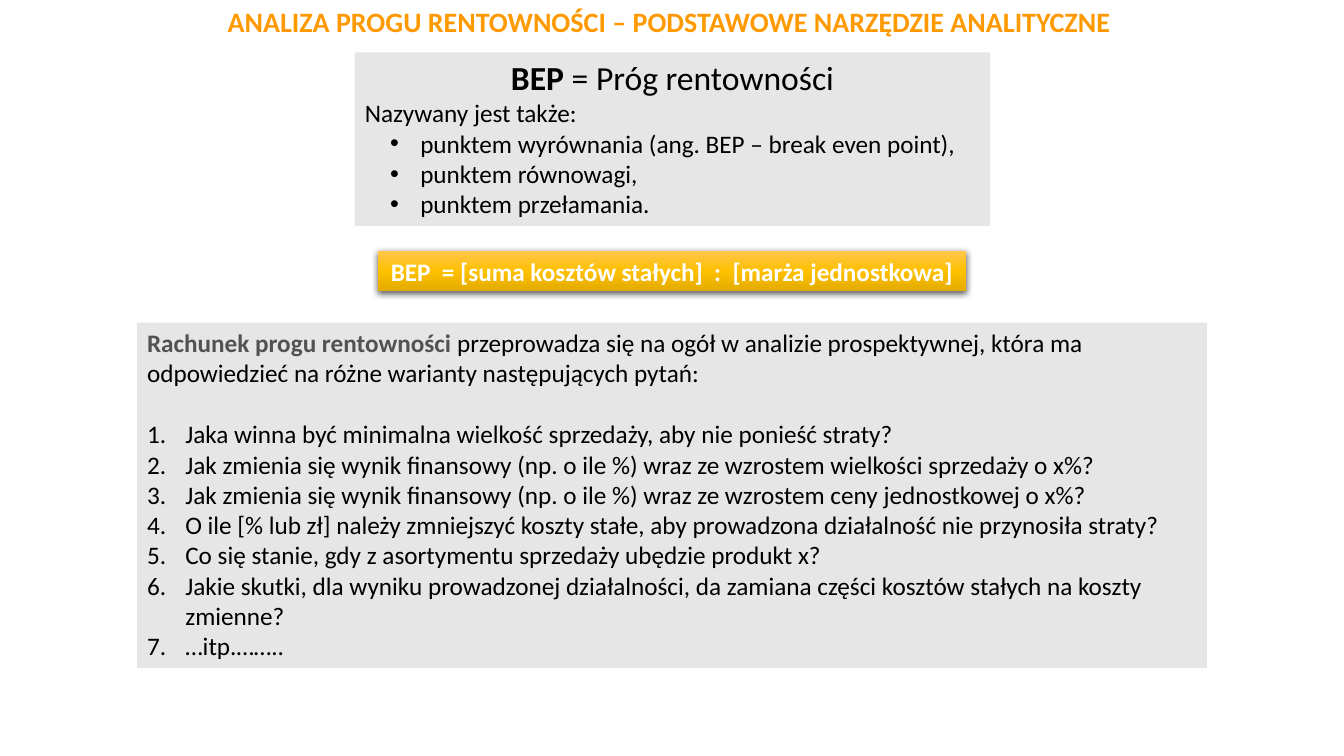
from lxml.etree import SubElement
from pptx import Presentation
from pptx.dml.color import RGBColor
from pptx.enum.shapes import MSO_SHAPE
from pptx.enum.text import MSO_ANCHOR, PP_ALIGN
from pptx.oxml.ns import qn
from pptx.util import Inches, Pt

COLORS = {
    "title": "FF9900", "panel": "E7E6E6", "text": "000000",
    "term": "525252", "white": "FFFFFF", "shadow": "000000",
    "gold_top": "FFC64B", "gold_middle": "FFC000", "gold_bottom": "E3AB00",
}
FONT = "Calibri"
TITLE = "ANALIZA PROGU RENTOWNOŚCI – PODSTAWOWE NARZĘDZIE ANALITYCZNE"
FORMULA = "BEP  = [suma kosztów stałych]  :  [marża jednostkowa]"
ALIASES = [
    "punktem wyrównania (ang. BEP – break even point),",
    "punktem równowagi,",
    "punktem przełamania.",
]
INTRO = ("przeprowadza się na ogół w analizie prospektywnej, która ma "
         "odpowiedzieć na różne warianty następujących pytań:")
QUESTIONS = [
    "Jaka winna być minimalna wielkość sprzedaży, aby nie ponieść straty?",
    "Jak zmienia się wynik finansowy (np. o ile %) wraz ze wzrostem wielkości sprzedaży o x%?",
    "Jak zmienia się wynik finansowy (np. o ile %) wraz ze wzrostem ceny jednostkowej o x%?",
    "O ile [% lub zł] należy zmniejszyć koszty stałe, aby prowadzona działalność nie przynosiła straty?",
    "Co się stanie, gdy z asortymentu sprzedaży ubędzie produkt x?",
    "Jakie skutki, dla wyniku prowadzonej działalności, da zamiana części kosztów stałych na koszty zmienne?",
    "…itp.……..",
]
BOXES = {
    "formula": (3.75, 2.49, 5.83, 0.4),
    "definition": (3.52, 0.52, 6.3, 1.72),
    "questions": (1.36, 3.2, 10.61, 3.43),
    "title": (2.16, 0, 9.02, 0.44),
}
STOPS = [(0, "gold_top"), (50, "gold_middle"), (100, "gold_bottom")]


def add_box(slide, name, wrap=True):
    """Add a plain rectangle whose text starts at the top."""
    box = slide.shapes.add_shape(MSO_SHAPE.RECTANGLE, *map(Inches, BOXES[name]))
    box.shadow.inherit = False
    box.line.fill.background()
    box.fill.solid()
    box.fill.fore_color.rgb = RGBColor.from_string(COLORS["panel"])
    box.text_frame.word_wrap = wrap
    box.text_frame.vertical_anchor = MSO_ANCHOR.TOP
    return box


def write(box, *parts, size=18, align=PP_ALIGN.LEFT, after=0, bullet=None, indent=(0, 0)):
    """Write one paragraph from (text, color name, bold) parts."""
    frame = box.text_frame
    para = frame.paragraphs[0] if not frame.text else frame.add_paragraph()
    para.alignment = align
    para.space_after = Pt(after)
    for text, color, bold in parts:
        span = para.add_run()
        span.text = text
        span.font.name = FONT
        span.font.size = Pt(size)
        span.font.bold = bold
        span.font.color.rgb = RGBColor.from_string(COLORS[color])
    if bullet:
        properties = para._p.get_or_add_pPr()
        properties.set("marL", str(Inches(indent[0])))
        properties.set("indent", str(Inches(indent[1])))
        SubElement(properties, qn("a:buFont"), typeface="Arial" if bullet == "buChar" else "+mj-lt")
        mark = {"char": "•"} if bullet == "buChar" else {"type": "arabicPeriod"}
        SubElement(properties, qn("a:" + bullet), **mark)


def make_gold(box):
    """Give the box a vertical gold gradient and a soft shadow."""
    box.fill.gradient()
    box.fill.gradient_angle = 270
    properties = box._element.spPr
    stops = properties.find(qn("a:gradFill")).find(qn("a:gsLst"))
    for stop in list(stops):
        stops.remove(stop)
    for position, color in STOPS:
        stop = SubElement(stops, qn("a:gs"), pos=str(position * 1000))
        SubElement(stop, qn("a:srgbClr"), val=COLORS[color])
    shadow = SubElement(properties.find(qn("a:effectLst")), qn("a:outerShdw"),
                        blurRad=str(Pt(4.5)), dist=str(Pt(1.5)), dir="5400000",
                        algn="ctr", rotWithShape="0")
    shade = SubElement(shadow, qn("a:srgbClr"), val=COLORS["shadow"])
    SubElement(shade, qn("a:alpha"), val="63000")


def main():
    """Build the break-even slide."""
    deck = Presentation()
    deck.slide_width, deck.slide_height = Inches(13.33), Inches(7.5)
    page = deck.slides.add_slide(deck.slide_layouts[6])

    formula = add_box(page, "formula", wrap=False)
    make_gold(formula)
    write(formula, (FORMULA, "white", True), align=PP_ALIGN.CENTER)

    definition = add_box(page, "definition")
    write(definition, ("BEP", "text", True), (" = Próg rentowności", "text", False),
          size=24, align=PP_ALIGN.CENTER)
    write(definition, ("Nazywany jest także:", "text", False))
    for alias in ALIASES:
        write(definition, (alias, "text", False), bullet="buChar", indent=(0.55, -0.3))

    questions = add_box(page, "questions")
    write(questions, ("Rachunek progu rentowności ", "term", True),
          (INTRO, "text", False), after=22)
    for question in QUESTIONS:
        write(questions, (question, "text", False), bullet="buAutoNum", indent=(0.38, -0.38))

    title = page.shapes.add_textbox(*map(Inches, BOXES["title"]))
    title.text_frame.word_wrap = False
    write(title, (TITLE, "title", True), size=20)

    deck.save("out.pptx")


if __name__ == "__main__":
    main()
